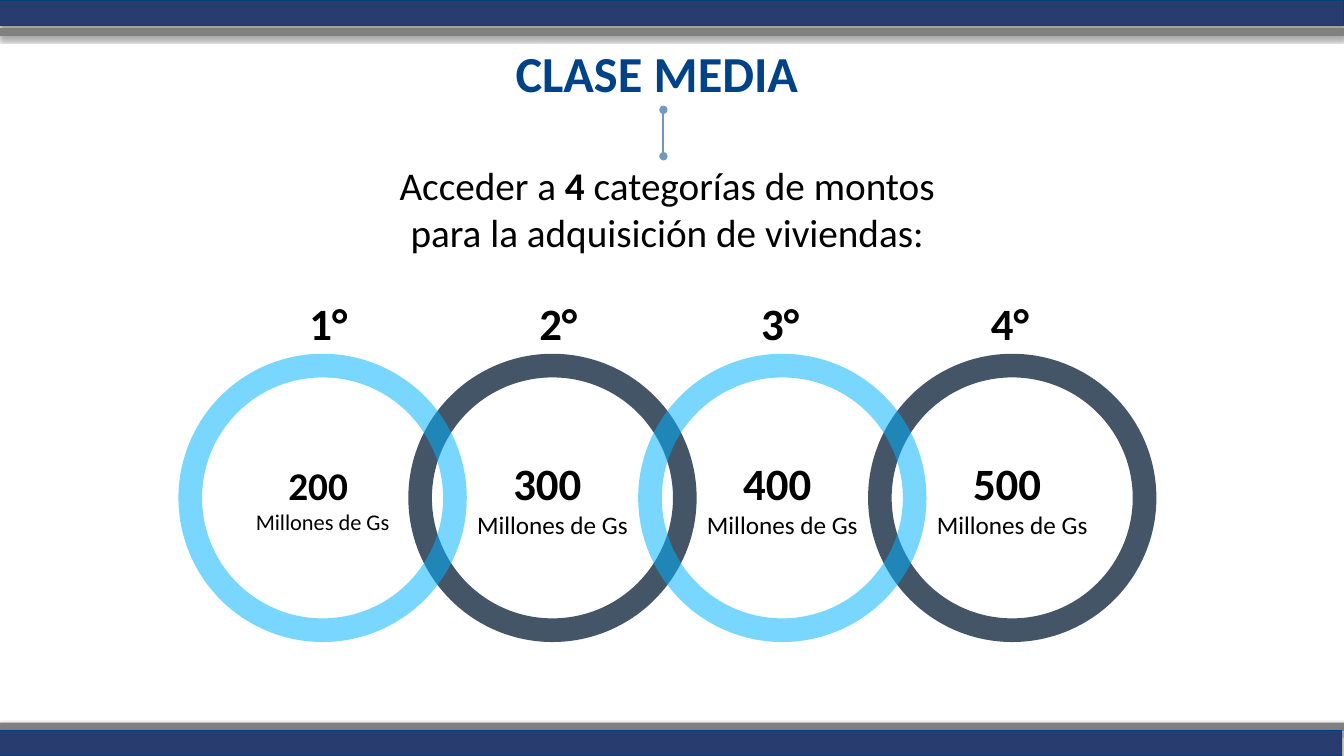
from lxml import etree
from pptx import Presentation
from pptx import util as u
from pptx.dml.color import RGBColor
from pptx.enum import shapes, text
from pptx.oxml import ns

NAVY, GRAY, BLACK = "293C70", "808080", "000000"
DARK, SKY = "001730", "00B2FF"


def color(code):
    return RGBColor.from_string(code)


def add(node, tag, **attrs):
    return etree.SubElement(node, ns.qn(tag), **attrs)


class Deck:
    font = "Calibri"

    def __init__(self, wide, high):
        self.prs = Presentation()
        self.prs.slide_width = u.Inches(wide)
        self.prs.slide_height = u.Inches(high)
        self.slide = self.prs.slides.add_slide(self.prs.slide_layouts[6])

    def shape(self, kind, box, fill):
        item = self.slide.shapes.add_shape(kind, *map(u.Inches, box))
        item.shadow.inherit = False
        item.fill.solid()
        item.fill.fore_color.rgb = color(fill)
        item.line.fill.background()
        return item

    def bar(self, left, top, high, fill, edge=None):
        item = self.shape(shapes.MSO_SHAPE.RECTANGLE, (left, top, 13.33, high), fill)
        if edge:
            item.line.color.rgb = color(edge)
            item.line.width = u.Pt(0.75)
        effects = item.element.spPr.find(ns.qn("a:effectLst"))
        shade = add(effects, "a:outerShdw", blurRad=str(u.Pt(3.1)),
                    dist=str(u.Pt(1.8)), dir="5400000", rotWithShape="0")
        add(add(shade, "a:srgbClr", val=BLACK), "a:alpha", val="35000")

    def ring(self, left, top, size, fill, alpha, lines):
        item = self.shape(shapes.MSO_SHAPE.DONUT, (left, top, size, size), fill)
        item.adjustments[0] = 0.082
        tint = item.element.spPr.find(ns.qn("a:solidFill"))[0]
        add(tint, "a:alpha", val=str(alpha * 1000))
        self.words(item.text_frame, lines, inset=0.1)
        item.text_frame.vertical_anchor = text.MSO_ANCHOR.MIDDLE

    def label(self, box, lines, wrap=True, align=text.PP_ALIGN.CENTER):
        item = self.slide.shapes.add_textbox(*map(u.Inches, box))
        self.words(item.text_frame, lines, align)
        item.text_frame.word_wrap = wrap

    def words(self, frame, lines, align=text.PP_ALIGN.CENTER, inset=0.05):
        """Each line is (runs, size, bold, color); a bold of None leaves it to the runs."""
        frame.word_wrap = True
        frame.margin_top = frame.margin_bottom = u.Inches(inset)
        frame.margin_left = frame.margin_right = u.Inches(0.1)
        for i, (runs, size, bold, ink) in enumerate(lines):
            para = frame.add_paragraph() if i else frame.paragraphs[0]
            para.alignment = align
            para.font.name = self.font
            para.font.size = u.Pt(size)
            para.font.color.rgb = color(ink)
            para.font.bold = bold
            for part, heavy in runs:
                run = para.add_run()
                run.text = part
                if bold is None:
                    run.font.bold = heavy

    def pin(self, x, top, end, ink):
        item = self.slide.shapes.add_connector(
            shapes.MSO_CONNECTOR.STRAIGHT, *map(u.Inches, (x, top, x, end)))
        item.line.color.rgb = color(ink)
        item.line.width = u.Pt(1.5)
        stroke = item.element.spPr.find(ns.qn("a:ln"))
        add(stroke, "a:headEnd", type="oval")
        add(stroke, "a:tailEnd", type="oval")
        add(item.element.spPr, "a:effectLst")


def plain(part):
    return [(part, False)]


def main():
    deck = Deck(13.33, 7.5)

    # Bands at the foot and head
    deck.bar(0, 7.17, 0.08, GRAY)
    deck.bar(-0.02, 7.25, 0.25, NAVY, "004184")
    deck.bar(0, 0, 0.25, NAVY, "004184")
    deck.bar(0, 0.28, 0.08, GRAY)

    # Linked rings, dark ones behind
    for i in (3, 1, 2, 0):
        fill, alpha = (DARK, 73) if i % 2 else (SKY, 53)
        big, small = (32, 18) if i else (28, 16)
        deck.ring(1.77 + 2.28 * i, 3.51, 2.86, fill, alpha, [
            (plain(f"{200 + 100 * i} "), big, True, BLACK),
            (plain("Millones de Gs"), small, False, BLACK)])

    # Heading and intro
    deck.label((3.27, 1.55, 6.78, 1.04), [
        ([("Acceder a ", False), ("4", True), (" categorías de montos ", False)],
         28, None, BLACK),
        (plain("para la adquisición de viviendas: "), 28, False, BLACK)])
    deck.label((2.97, 0.37, 7.09, 0.71),
               [(plain("CLASE MEDIA"), 36, True, "004287")])
    deck.pin(6.58, 1.09, 1.55, "7497BC")

    # Rank above each ring
    for i, left in enumerate((2.97, 5.25, 7.45, 9.73)):
        deck.label((left, 2.88, 0.58, 0.64),
                   [(plain(f"{i + 1}°"), 32, True, BLACK)],
                   wrap=False, align=text.PP_ALIGN.LEFT)

    deck.prs.save("out.pptx")


if __name__ == "__main__":
    main()
